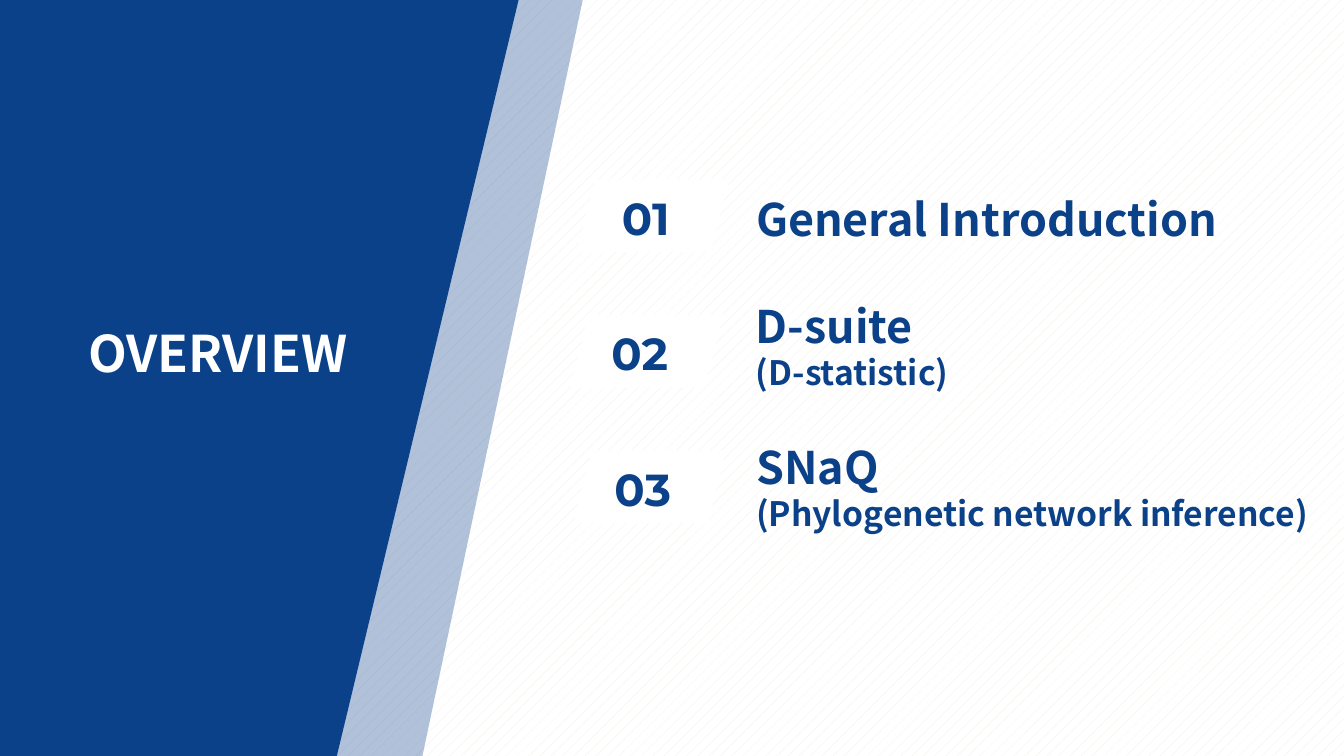
from pptx import Presentation
from pptx.dml.color import RGBColor
from pptx.enum.dml import MSO_PATTERN
from pptx.enum.shapes import MSO_SHAPE
from pptx.enum.text import MSO_AUTO_SIZE, PP_ALIGN
from pptx.oxml.ns import qn
from pptx.util import Inches, Pt
from lxml.etree import SubElement

COLORS = {"navy": "0B4189", "white": "FFFFFF", "cream": "EEECE1"}
HEADING_FONT = "Noto Sans CJK SC"
NUMBER_FONT = "Montserrat"
TITLE = "OVERVIEW"
TOPICS = [
    ("01", 5.72, ["General Introduction"], (1.85, 4.91, 0.64), False),
    ("02", 5.66, ["D-suite", "(D-statistic)"], (2.91, 2.2, 1.04), False),
    ("03", 5.69, ["SNaQ", "(Phylogenetic network inference)"], (4.31, 5.88, 1.04), True),
]
BANDS = [
    ((-3.34, -2.22, 9.59, 11.31), 32),
    ((-2.93, -0.65, 8.23, 8.56), 100),
]
FIRST_ROW, ROW_STEP = 1.78, 1.345
TOPIC_LEFT = 7.4


def color(name):
    return RGBColor.from_string(COLORS[name])


def add_parallelogram(page, place, fill, opacity=100):
    shape = page.shapes.add_shape(MSO_SHAPE.PARALLELOGRAM, *map(Inches, place))
    shape.shadow.inherit = False
    shape.fill.solid()
    shape.fill.fore_color.rgb = color(fill)
    shape.line.fill.background()
    if opacity < 100:
        tint = shape._element.spPr.find(qn("a:solidFill"))[0]
        SubElement(tint, qn("a:alpha")).set("val", str(opacity * 1000))


def add_text(page, place, lines, sizes, font, fill, align=PP_ALIGN.LEFT, wrap=True):
    box = page.shapes.add_textbox(*map(Inches, place))
    frame = box.text_frame
    frame.text = "\n".join(lines)
    frame.word_wrap = wrap
    frame.auto_size = MSO_AUTO_SIZE.SHAPE_TO_FIT_TEXT
    for para, size in zip(frame.paragraphs, sizes):
        para.alignment = align
        for span in para.runs:
            span.font.name = font
            span.font.size = Pt(size)
            span.font.bold = True
            span.font.color.rgb = color(fill)
            east_asian = SubElement(span.font._element, qn("a:ea"))
            east_asian.set("typeface", font)
    return frame


def main():
    deck = Presentation()
    deck.slide_width, deck.slide_height = Inches(13.33), Inches(7.5)
    page = deck.slides.add_slide(deck.slide_layouts[6])

    backdrop = page.background.fill
    backdrop.patterned()
    backdrop.pattern = MSO_PATTERN.PERCENT_10
    backdrop.fore_color.rgb = color("cream")
    backdrop.back_color.rgb = color("white")

    for row, (number, left, lines, (top, width, height), wrap) in enumerate(TOPICS):
        row_top = FIRST_ROW + row * ROW_STEP
        add_parallelogram(page, (left, row_top, 1.51, 0.72), "white")
        add_text(page, (left + 0.09, row_top + 0.06, 1.19, 0.64), [number], [32],
                 NUMBER_FONT, "navy", PP_ALIGN.CENTER)
        add_text(page, (TOPIC_LEFT, top, width, height), lines, [32, 24],
                 HEADING_FONT, "navy", wrap=wrap)

    for place, opacity in BANDS:
        add_parallelogram(page, place, "navy", opacity)

    title = add_text(page, (0.53, 3.21, 3.26, 0.65), [TITLE], [36],
                     HEADING_FONT, "white", PP_ALIGN.CENTER)
    title.paragraphs[0].line_spacing = 0.9

    deck.save("out.pptx")


if __name__ == "__main__":
    main()
